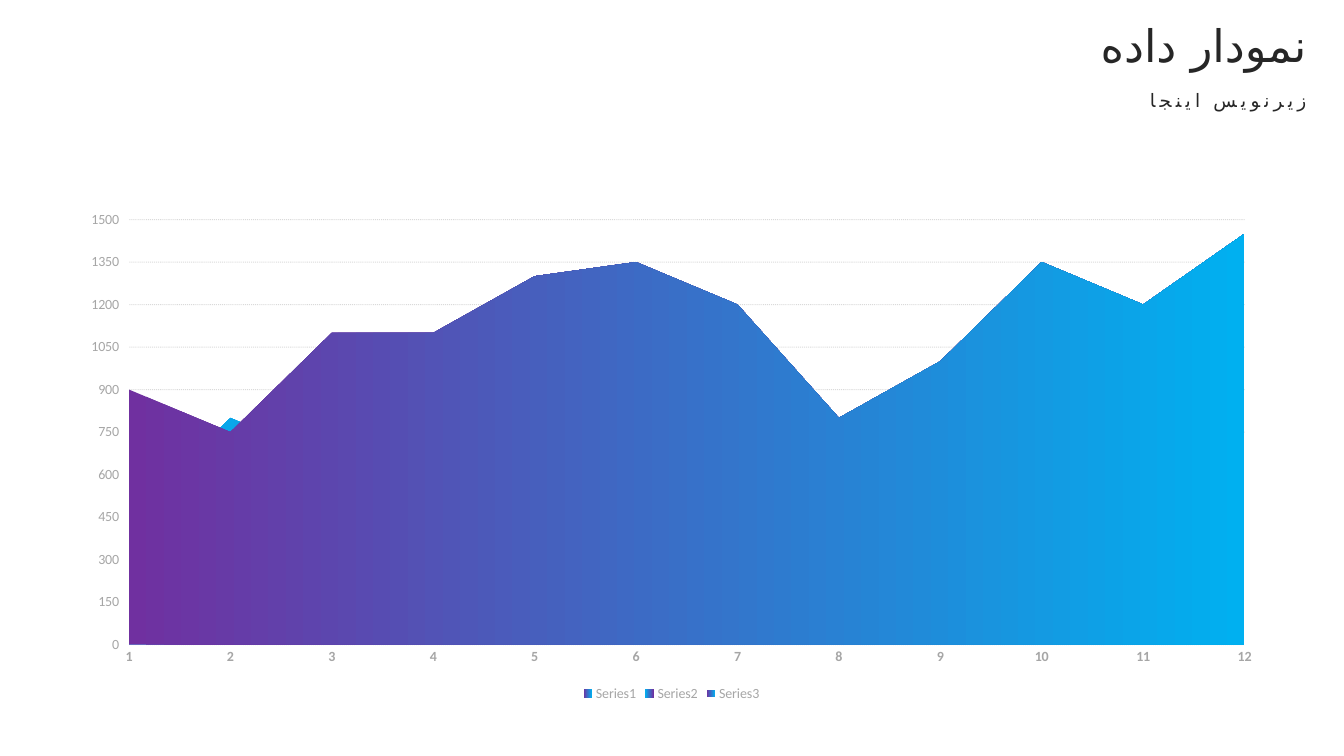
from lxml import etree
from pptx import Presentation
from pptx.chart.data import CategoryChartData
from pptx.dml.color import RGBColor
from pptx.enum.chart import XL_CHART_TYPE, XL_LEGEND_POSITION, XL_TICK_MARK
from pptx.enum.dml import MSO_LINE
from pptx.enum.text import MSO_ANCHOR, MSO_AUTO_SIZE, PP_ALIGN
from pptx.oxml.ns import qn
from pptx.util import Pt

AREA = XL_CHART_TYPE.AREA
LEGEND_BOTTOM = XL_LEGEND_POSITION.BOTTOM
TICK_NONE = XL_TICK_MARK.NONE
TICK_OUTSIDE = XL_TICK_MARK.OUTSIDE
DOTTED = MSO_LINE.ROUND_DOT
MIDDLE = MSO_ANCHOR.MIDDLE
NO_AUTOFIT = MSO_AUTO_SIZE.NONE
RIGHT = PP_ALIGN.RIGHT

INK = "262626"
LABEL = "A6A6A6"
PURPLE = "7030A0"
BLUE = "00B0F0"

SERIES = [
    ("Series1", [900, 750, 1100, 1100, 1300, 1350, 1200, 800, 1000, 1350, 1200, 1450], (PURPLE, BLUE)),
    ("Series2", [450, 800, 650, 700, 500, 1100, 700, 600, 500, 800, 1000, 850], (BLUE, PURPLE)),
    ("Series3", [150, 400, 550, 200, 350, 500, 350, 200, 150, 150, 450, 600], (PURPLE, BLUE)),
]


def color(value):
    return RGBColor.from_string(value)


def style_font(font, size, ink, family, bold=False):
    font.size = Pt(size)
    font.name = family
    font.bold = bold
    font.color.rgb = color(ink)


def write_persian(heading, box, wording, size, family, line_spacing, tracking=0):
    heading.left, heading.top, heading.width, heading.height = map(Pt, box)
    frame = heading.text_frame
    frame.word_wrap = True
    frame.auto_size = NO_AUTOFIT
    frame.vertical_anchor = MIDDLE
    paragraph = frame.paragraphs[0]
    paragraph.alignment = RIGHT
    paragraph.line_spacing = line_spacing
    paragraph._p.get_or_add_pPr().set("rtl", "1")
    run = paragraph.add_run()
    run.text = wording
    style_font(run.font, size, INK, family)
    properties = run._r.get_or_add_rPr()
    properties.set("lang", "fa-IR")
    if tracking:
        properties.set("spc", str(tracking * 100))
    etree.SubElement(properties, qn("a:cs")).set("typeface", family)


def add_heading(slide, box):
    left, top, width, height = box
    write_persian(slide.shapes.title, (left, top, width, 39.6),
                  "نمودار داده", 32, "TeX Gyre Bonum", 0.9)
    subtitle_width, subtitle_height = 244.8, 20.2
    subtitle_box = (left + width - subtitle_width, top + height - subtitle_height,
                    subtitle_width, subtitle_height)
    subtitle = slide.shapes.add_textbox(*map(Pt, subtitle_box))
    write_persian(subtitle, subtitle_box, "زیرنویس اینجا", 13.2, "Open Sans", 0.7, 3)


def format_axes(chart):
    months = chart.category_axis
    months.major_tick_mark = TICK_NONE
    months.minor_tick_mark = TICK_NONE
    months.has_major_gridlines = False
    months.format.line.color.rgb = color("BFBFBF")
    months.format.line.width = Pt(0.75)
    style_font(months.tick_labels.font, 10, LABEL, "Calibri", True)

    amounts = chart.value_axis
    amounts.minimum_scale = 0
    amounts.maximum_scale = 1500
    amounts.major_unit = 150
    amounts.major_tick_mark = TICK_OUTSIDE
    amounts.minor_tick_mark = TICK_NONE
    amounts.format.line.fill.background()
    style_font(amounts.tick_labels.font, 10, LABEL, "Calibri")
    amounts._element.find(qn("c:crossBetween")).set("val", "midCat")

    grid = amounts.major_gridlines.format.line
    grid.color.rgb = color("0D0D0D")
    grid.width = Pt(0.75)
    grid.dash_style = DOTTED
    grid_color = next(amounts.major_gridlines._xAx.iter(qn("a:srgbClr")))
    etree.SubElement(grid_color, qn("a:alpha")).set("val", "15000")


def add_area_chart(slide, box):
    values = CategoryChartData()
    values.categories = [str(month) for month in range(1, 13)]
    for name, amounts, _ in SERIES:
        values.add_series(name, amounts)
    chart = slide.shapes.add_chart(AREA, *map(Pt, box), values).chart
    chart.has_title = False
    style_font(chart.font, 10, LABEL, "Calibri")
    chart.has_legend = True
    chart.legend.position = LEGEND_BOTTOM
    chart.legend.include_in_layout = False
    style_font(chart.legend.font, 10, LABEL, "Calibri")
    chart.plots[0].vary_by_categories = False
    format_axes(chart)

    for area, (_, _, shades) in zip(chart.plots[0].series, SERIES):
        area.format.fill.gradient()
        area.format.fill.gradient_angle = 0
        for stop, shade in zip(area.format.fill.gradient_stops, shades):
            stop.color.rgb = color(shade)
        area.format.line.fill.background()
    front_edge = chart.plots[0].series[2].format.line
    front_edge.color.rgb = color("FFFFFF")
    front_edge.width = Pt(0.75)


def main():
    deck = Presentation()
    deck.slide_width, deck.slide_height = Pt(960), Pt(540)
    slide = deck.slides.add_slide(deck.slide_layouts[5])
    add_area_chart(slide, (48, 144, 863.3, 360))
    add_heading(slide, (563.8, 14.4, 376.6, 69.2))
    deck.save("out.pptx")


if __name__ == "__main__":
    main()
